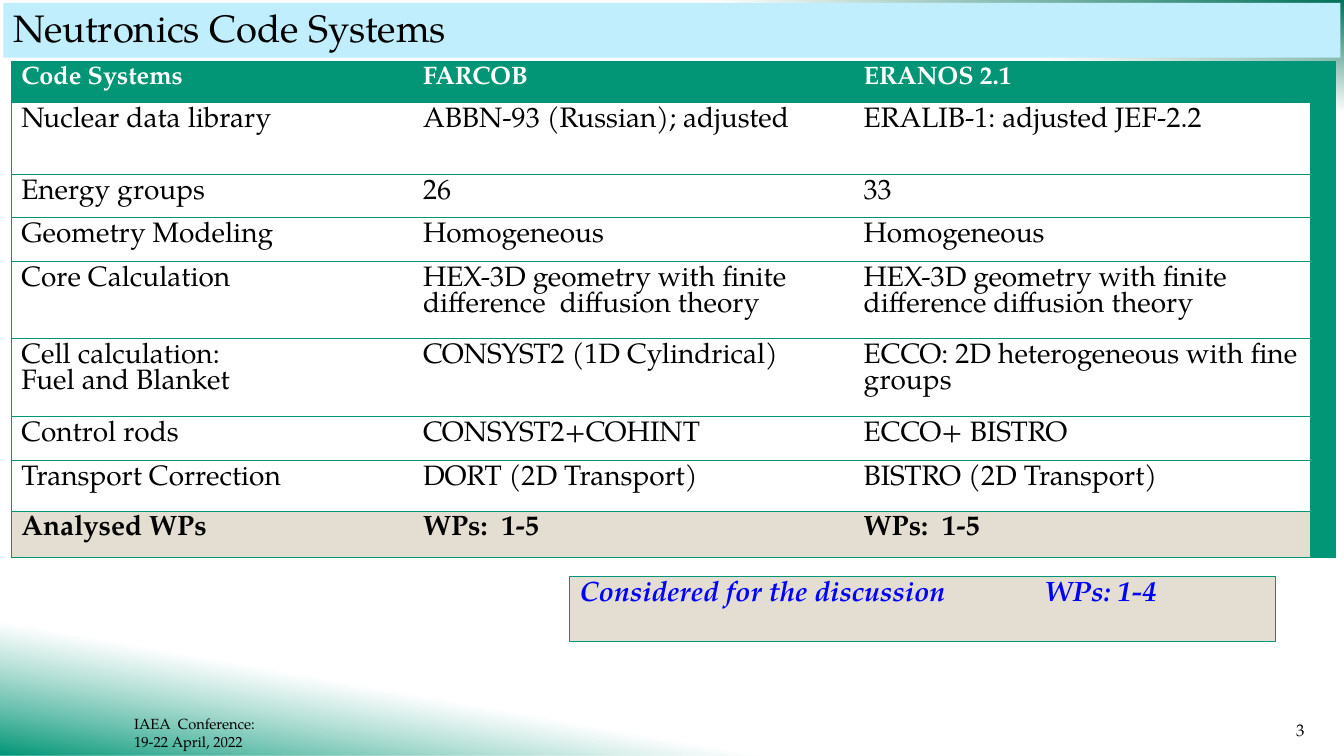
import pptx
import pptx.dml.color
import pptx.enum.shapes
import pptx.enum.text
import pptx.oxml.ns
import pptx.util
from lxml import etree

Pt = pptx.util.Pt
qn = pptx.oxml.ns.qn

FACE = "TeX Gyre Pagella"
HUES = {
    "green": "029676", "dark": "017058", "white": "FFFFFF",
    "black": "000000", "blue": "0000FF", "sky": "C1EEFC", "sand": "E3DED1",
}
PLAIN = "{2D5ABB26-0587-4C30-8999-92F81FD0307C}"  # table style with no grid

# Text formats
TITLE = {"size": Pt(27.3), "bold": False}
HEAD = {"size": Pt(18), "bold": True}
BODY = {"size": Pt(20), "bold": False}
LAST = {"size": Pt(20), "bold": True}
NOTE = {"size": Pt(20), "bold": True, "italic": True}
FOOT = {"size": Pt(10.5)}
PAGE = {"size": Pt(12)}

# Code table: text of each row
CODES = [
    ("Code Systems", "FARCOB", "ERANOS 2.1"),
    ("Nuclear data library", "ABBN-93 (Russian); adjusted", "ERALIB-1: adjusted JEF-2.2"),
    ("Energy groups", "26", "33"),
    ("Geometry Modeling", "Homogeneous", "Homogeneous"),
    ("Core Calculation", "HEX-3D geometry with finite difference  diffusion theory",
     "HEX-3D geometry with finite difference diffusion theory"),
    ("Cell calculation:\nFuel and Blanket", "CONSYST2 (1D Cylindrical)",
     "ECCO: 2D heterogeneous with fine groups"),
    ("Control rods", "CONSYST2+COHINT", "ECCO+ BISTRO"),
    ("Transport Correction", "DORT (2D Transport)", "BISTRO (2D Transport)"),
    ("Analysed WPs", "WPs:  1-5", "WPs:  1-5"),
]
HIGHS = [29.5, 51.5, 30.5, 31.5, 55, 55.5, 31.5, 36.5, 33]
WIDTHS = [287, 314.75, 326, 18.25]


def rgb(hue):
    return pptx.dml.color.RGBColor.from_string(HUES[hue])


def paint(fill, hue):
    fill.solid()
    fill.fore_color.rgb = rgb(hue)


def style(frame, form, hue="black", space=1.0):
    for para in frame.paragraphs:
        para.alignment = pptx.enum.text.PP_ALIGN.LEFT
        para.line_spacing = space
        for run in para.runs:
            for key, value in form.items():
                setattr(run.font, key, value)
            run.font.name = FACE
            run.font.color.rgb = rgb(hue)


def add_wash(slide, top, high, hue, stop, alpha=None, flip=False):
    """Full-width band that fades from one corner to white."""
    band = slide.shapes.add_shape(
        pptx.enum.shapes.MSO_SHAPE.RECTANGLE, 0, Pt(top), Pt(960), Pt(high))
    band.shadow.inherit = False
    band.line.fill.background()
    band.fill.gradient()
    band.fill.gradient_angle = 260
    first, last = band.fill.gradient_stops
    first.color.rgb, first.position = rgb(hue), 0
    last.color.rgb, last.position = rgb("white"), stop
    if alpha:
        tint = band.element.findall(".//" + qn("a:srgbClr"))[-1]
        etree.SubElement(tint, qn("a:alpha")).set("val", str(alpha * 1000))
    if flip:
        frame = band.element.spPr.find(qn("a:xfrm"))
        frame.set("flipH", "1")
        frame.set("flipV", "1")


def add_label(slide, text, box, form):
    label = slide.shapes.add_textbox(*map(Pt, box))
    label.text_frame.word_wrap = True
    label.text_frame.text = text
    style(label.text_frame, form)


def set_title(slide, text):
    title = slide.shapes.title
    box = {"left": 2.5, "top": 2, "width": 955, "height": 39.25}
    for key, value in box.items():
        setattr(title, key, Pt(value))
    paint(title.fill, "sky")
    frame = title.text_frame
    frame.text = text
    frame.auto_size = pptx.enum.text.MSO_AUTO_SIZE.NONE
    frame.vertical_anchor = pptx.enum.text.MSO_ANCHOR.MIDDLE
    style(frame, TITLE, space=0.9)
    slide.shapes._spTree.append(title.element)  # in front of the bands


def add_grid(slide, left, top, widths, highs):
    shape = slide.shapes.add_table(
        len(highs), len(widths), Pt(left), Pt(top), Pt(sum(widths)), Pt(sum(highs)))
    grid = shape.table
    grid._tbl.tblPr.find(qn("a:tableStyleId")).text = PLAIN
    grid.horz_banding = False
    for col, width in zip(grid.columns, widths):
        col.width = Pt(width)
    for row, high in zip(grid.rows, highs):
        row.height = Pt(high)
    return grid


def edge(cell, sides):
    props = cell._tc.get_or_add_tcPr()
    for side in sides:
        line = etree.SubElement(props, qn("a:ln" + side), w=str(Pt(0.5)))
        solid = etree.SubElement(line, qn("a:solidFill"))
        etree.SubElement(solid, qn("a:srgbClr"), val=HUES["green"])


def fill_cell(cell, text, form, hue, back, sides):
    edge(cell, sides)
    if back:
        paint(cell.fill, back)
    else:
        cell.fill.background()
    cell.text = text
    style(cell.text_frame, form, hue, 0.9)


def add_codes(slide):
    grid = add_grid(slide, 8, 43.75, WIDTHS, HIGHS)
    looks = [(HEAD, "white", "green")]
    looks += [(BODY, "black", None)] * (len(CODES) - 2)
    looks += [(LAST, "black", "sand")]
    for r, (texts, look) in enumerate(zip(CODES, looks)):
        for c, text in enumerate(texts):
            fill_cell(grid.cell(r, c), text, *look, "TB" if c else "LTB")
    # Green strip down the right side
    strip = grid.cell(0, len(WIDTHS) - 1)
    strip.merge(grid.cell(len(CODES) - 1, len(WIDTHS) - 1))
    edge(strip, "RTB")
    paint(strip.fill, "green")


def add_note(slide):
    grid = add_grid(slide, 406.75, 411.5, [327, 177], [46.5])
    texts = ("Considered for the discussion", " WPs: 1-4")
    for c, (text, sides) in enumerate(zip(texts, ("LTB", "RTB"))):
        fill_cell(grid.cell(0, c), text, NOTE, "blue", "sand", sides)


def main():
    deck = pptx.Presentation()
    deck.slide_width, deck.slide_height = Pt(960), Pt(540)
    slide = deck.slides.add_slide(deck.slide_layouts[5])

    # Background and footer
    add_wash(slide, 417.5, 122.5, "green", 0.33, alpha=80, flip=True)
    add_wash(slide, 0, 168, "dark", 0.24)
    add_label(slide, "3", (918.75, 510.5, 32.5, 21.75), PAGE)
    add_label(slide, "IAEA  Conference:\n19-22 April, 2022", (88.75, 507, 108, 32.5), FOOT)

    # Title and tables
    set_title(slide, "Neutronics Code Systems")
    add_codes(slide)
    add_note(slide)
    deck.save("out.pptx")


if __name__ == "__main__":
    main()
